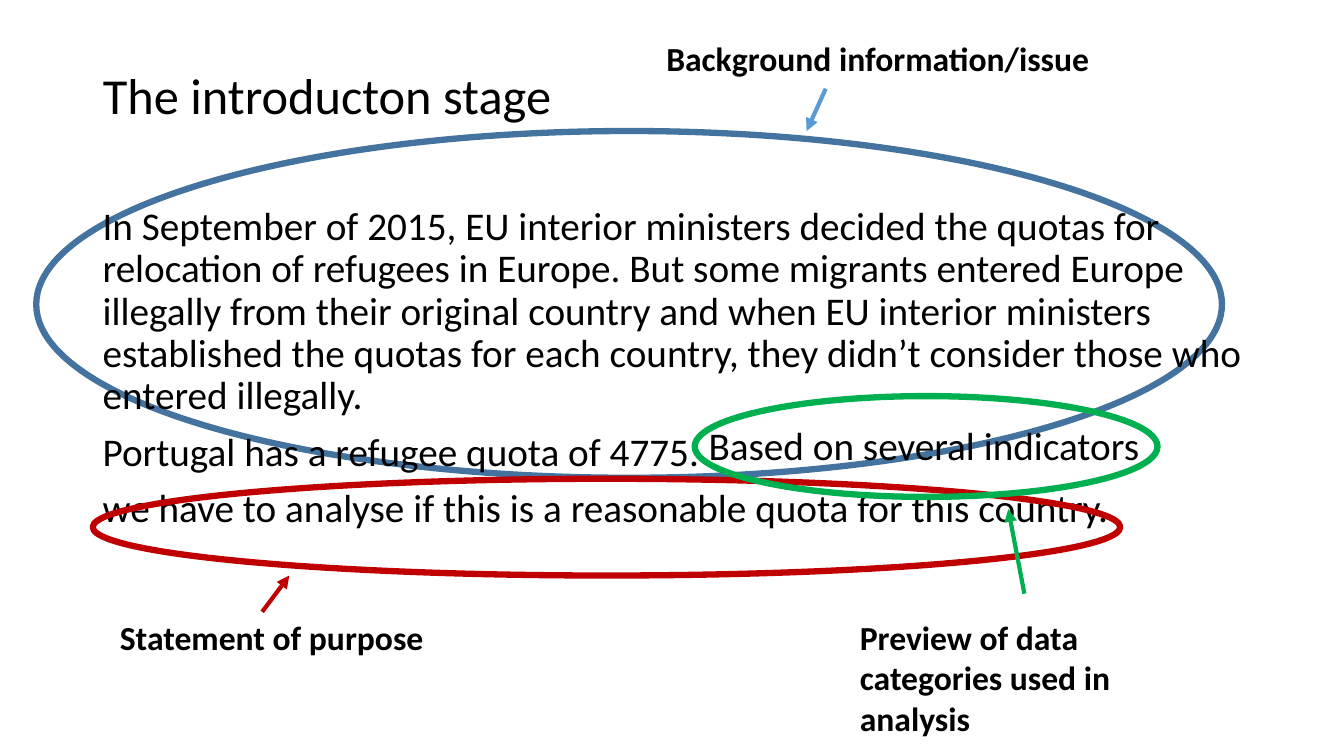
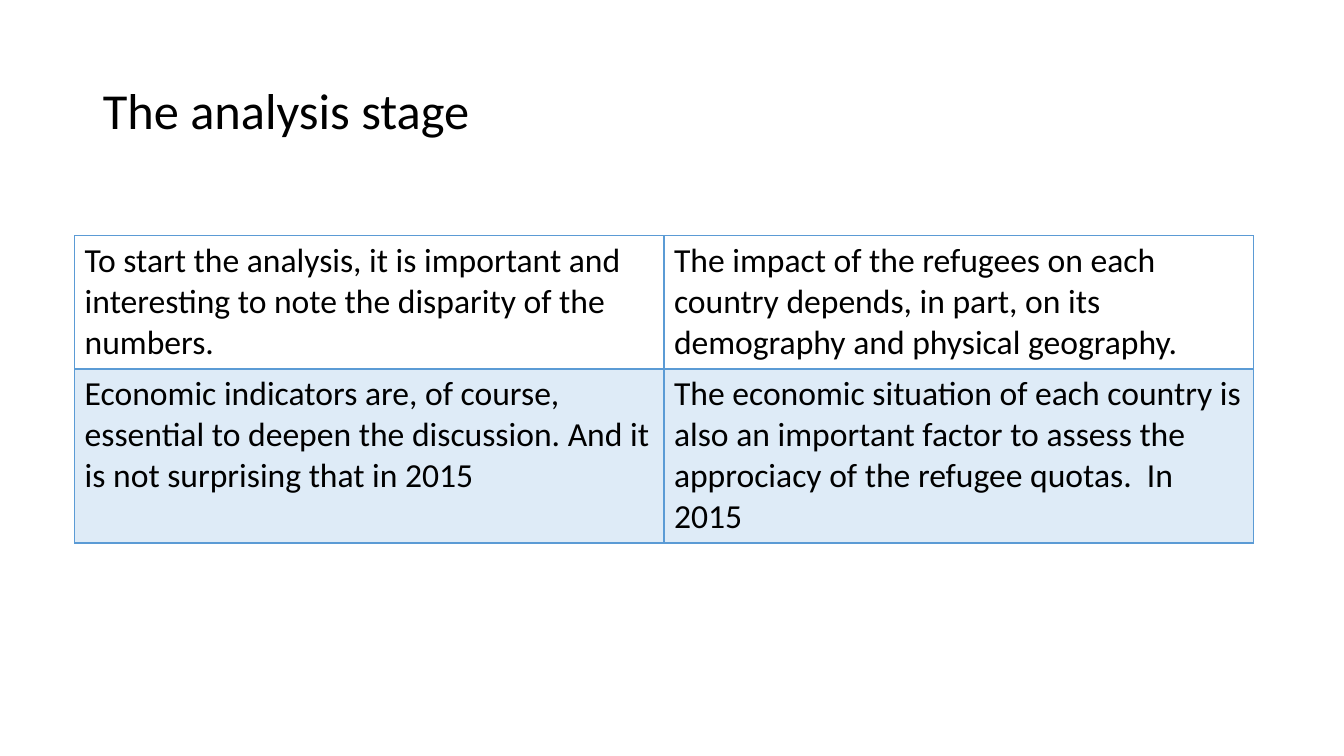
from lxml import etree
from pptx import Presentation
from pptx import util as u
from pptx.dml.color import RGBColor
from pptx.enum import shapes, text
from pptx.oxml import ns

BLACK = RGBColor(0x00, 0x00, 0x00)
DARK_BLUE = RGBColor(0x43, 0x73, 0x9E)
BLUE = RGBColor(0x5B, 0x9B, 0xD5)
PALE_BLUE = RGBColor(0xDE, 0xEB, 0xF7)
RED = RGBColor(0xC0, 0x00, 0x00)
GREEN = RGBColor(0x00, 0xB0, 0x50)
FONT = "Calibri"
TITLE_ONLY = 5

BACKGROUND = (
    "In September of 2015, EU interior ministers decided the quotas for relocation of "
    "refugees in Europe. But some migrants entered Europe illegally from their original "
    "country and when EU interior ministers established the quotas for each country, they "
    "didn’t consider those who entered illegally.")
INTRODUCTION = [
    BACKGROUND,
    "Portugal has a refugee quota of 4775.",
    "we have to analyse if this is a reasonable quota for this country.",
]
ANALYSIS = [
    ["To start the analysis, it is important and interesting to note the disparity of the "
     "numbers.",
     "The impact of the refugees on each country depends, in part, on its demography and "
     "physical geography."],
    ["Economic indicators are, of course, essential to deepen the discussion. And it is not "
     "surprising that in 2015",
     "The economic situation of each country is also an important factor to assess the "
     "approciacy of the refugee quotas.  In 2015"],
]


def inches(box):
    return [u.Inches(length) for length in box]


def write(frame, paragraphs, size=24, bold=False, spacing=1.0, before=0):
    """Fill a text frame, one paragraph for each string."""
    frame.word_wrap = True
    for i, words in enumerate(paragraphs):
        para = frame.paragraphs[0] if i == 0 else frame.add_paragraph()
        para.alignment = text.PP_ALIGN.LEFT
        para.line_spacing = spacing
        para.space_before = u.Pt(before)
        run = para.add_run()
        run.text = words
        run.font.name, run.font.size, run.font.bold = FONT, u.Pt(size), bold
        run.font.color.rgb = BLACK


def add_text(slide, box, *paragraphs, **style):
    write(slide.shapes.add_textbox(*inches(box)).text_frame, paragraphs, **style)


def add_titled_slide(deck, title, box, anchor, spacing=1.0):
    slide = deck.slides.add_slide(deck.slide_layouts[TITLE_ONLY])
    heading = slide.shapes.title
    heading.left, heading.top, heading.width, heading.height = inches(box)
    heading.text_frame.auto_size = text.MSO_AUTO_SIZE.NONE
    heading.text_frame.vertical_anchor = anchor
    write(heading.text_frame, [title], size=36, spacing=spacing)
    return slide


def add_ring(slide, box, color):
    ring = slide.shapes.add_shape(shapes.MSO_SHAPE.OVAL, *inches(box))
    ring.shadow.inherit = False
    ring.fill.background()
    ring.line.color.rgb = color
    ring.line.width = u.Pt(4.5)


def add_arrow(slide, start, end, color):
    arrow = slide.shapes.add_connector(
        shapes.MSO_CONNECTOR.STRAIGHT, *inches(start + end))
    arrow.line.color.rgb = color
    arrow.line.width = u.Pt(3)
    etree.SubElement(arrow.line._get_or_add_ln(), ns.qn("a:tailEnd"), type="triangle")
    etree.SubElement(arrow._element.spPr, ns.qn("a:effectLst"))


def add_note(slide, box, words, start, end, color):
    """Bold label with the arrow that leads to its ring."""
    add_text(slide, box, words, bold=True)
    add_arrow(slide, start, end, color)


def set_borders(cell, color, **widths):
    """Draw cell borders; widths in points by side, 1 where not given."""
    props = cell._tc.get_or_add_tcPr()
    for i, side in enumerate("LRTB"):
        line = etree.Element(ns.qn("a:ln" + side), w=str(u.Pt(widths.get(side, 1))))
        fill = etree.SubElement(line, ns.qn("a:solidFill"))
        etree.SubElement(fill, ns.qn("a:srgbClr"), val=str(color))
        props.insert(i, line)


def add_analysis_table(slide, box, row_heights):
    left, top, width, height = inches(box)
    rows, cols = len(ANALYSIS), len(ANALYSIS[0])
    table = slide.shapes.add_table(rows, cols, left, top, width, height).table
    table.first_row = table.horz_banding = False
    for r, row in enumerate(ANALYSIS):
        table.rows[r].height = u.Inches(row_heights[r])
        for c, words in enumerate(row):
            cell = table.cell(r, c)
            write(cell.text_frame, [words])
            if r == 0:
                cell.fill.background()
                set_borders(cell, BLUE, B=2)
            else:
                cell.fill.solid()
                cell.fill.fore_color.rgb = PALE_BLUE
                set_borders(cell, BLUE, T=2)


def build_introduction(deck):
    slide = add_titled_slide(deck, "The introducton stage", (0.92, 0.59, 5.32, 0.71),
                             text.MSO_ANCHOR.TOP)
    # Background passage
    add_ring(slide, (0.36, 1.3, 11.76, 3.44), DARK_BLUE)
    add_text(slide, (0.92, 2, 11.5, 4.76), *INTRODUCTION, size=28, spacing=0.9, before=10)
    add_note(slide, (6.51, 0.33, 4.71, 0.5), "Background information/issue",
             (8.19, 0.88), (8, 1.3), BLUE)
    # Purpose
    add_ring(slide, (0.92, 4.75, 10.19, 0.96), RED)
    add_note(slide, (1.09, 6.07, 3.88, 0.5), "Statement of purpose",
             (2.6, 6.07), (2.87, 5.71), RED)
    # Preview of indicators
    add_ring(slide, (6.89, 3.93, 4.59, 1), GREEN)
    add_note(slide, (8.43, 6.07, 2.95, 1.31), "Preview of data categories used in analysis",
             (10.16, 5.89), (10, 5.05), GREEN)
    add_text(slide, (6.93, 4.13, 5.33, 0.57), "Based on several indicators", size=28)


def build_analysis(deck):
    slide = add_titled_slide(deck, "The analysis stage", (0.92, 0.4, 11.5, 1.45),
                             text.MSO_ANCHOR.MIDDLE, spacing=0.9)
    add_analysis_table(slide, (0.74, 2.34, 11.69, 3.04), (1.32, 1.72))


def main():
    deck = Presentation()
    deck.slide_width, deck.slide_height = inches((13.33, 7.5))
    build_introduction(deck)
    build_analysis(deck)
    deck.save("out.pptx")


if __name__ == "__main__":
    main()
